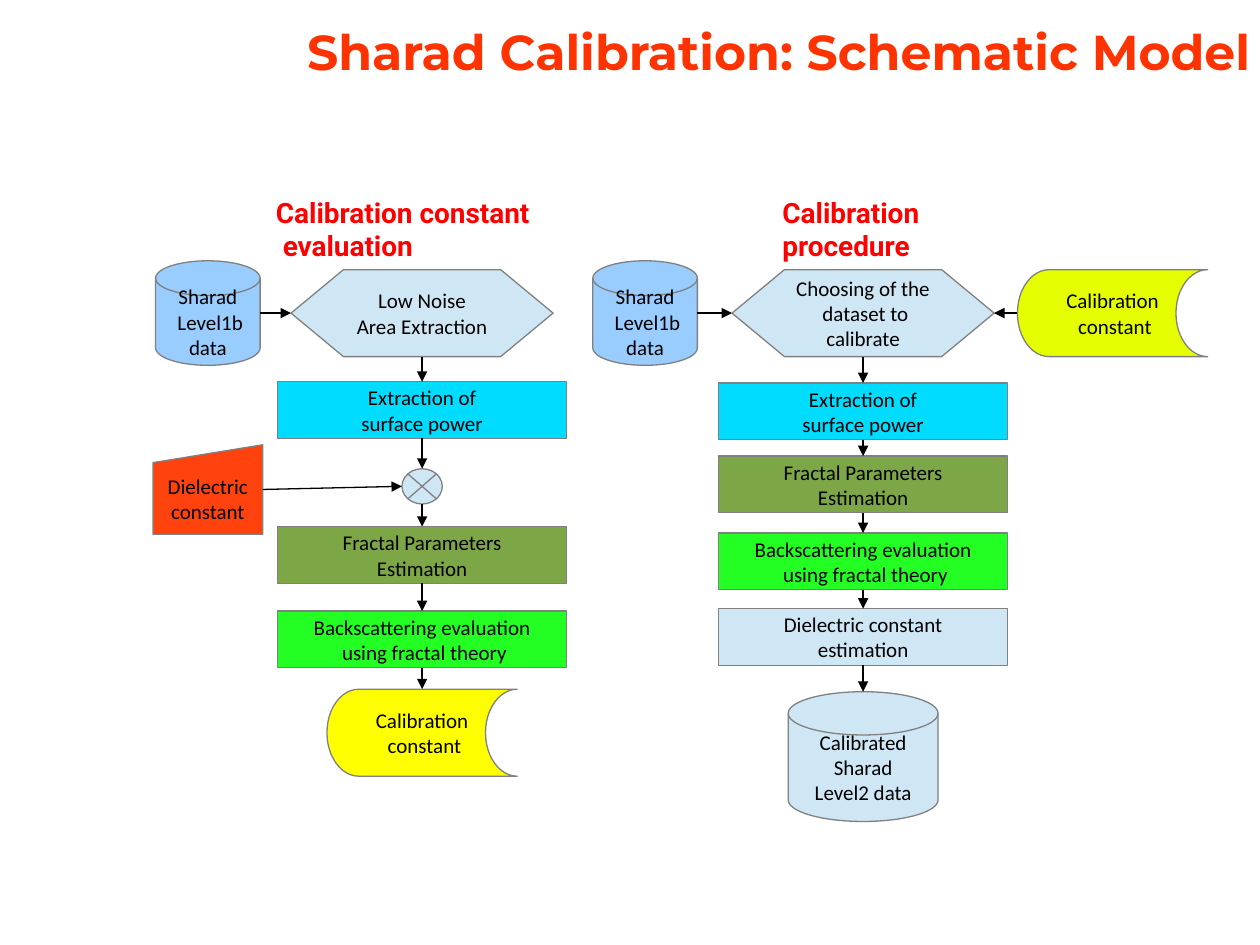
from pptx import Presentation
from pptx.dml.color import RGBColor
from pptx.enum.shapes import MSO_CONNECTOR, MSO_SHAPE
from pptx.enum.text import MSO_ANCHOR, PP_ALIGN
from pptx.oxml.ns import qn
from pptx.util import Inches, Pt
from lxml import etree

STEP = MSO_SHAPE.FLOWCHART_PROCESS
PREP = MSO_SHAPE.FLOWCHART_PREPARATION
STORE = MSO_SHAPE.FLOWCHART_STORED_DATA
DISK = MSO_SHAPE.FLOWCHART_MAGNETIC_DISK
JOIN = MSO_SHAPE.FLOWCHART_SUMMING_JUNCTION
INPUT = MSO_SHAPE.FLOWCHART_MANUAL_INPUT
LINE = MSO_CONNECTOR.STRAIGHT
LEFT, MID, RIGHT = PP_ALIGN.LEFT, PP_ALIGN.CENTER, PP_ALIGN.RIGHT
TOP, HALF = MSO_ANCHOR.TOP, MSO_ANCHOR.MIDDLE

BLACK = RGBColor(0x00, 0x00, 0x00)
GREY = RGBColor(0x80, 0x80, 0x80)
RED = RGBColor(0xFF, 0x00, 0x00)
ORANGE = RGBColor(0xFF, 0x33, 0x00)
RUST = RGBColor(0xFF, 0x42, 0x0E)
PALE = RGBColor(0xCF, 0xE7, 0xF5)
BLUE = RGBColor(0x99, 0xCC, 0xFF)
CYAN = RGBColor(0x00, 0xDC, 0xFF)
OLIVE = RGBColor(0x7D, 0xA6, 0x47)
GREEN = RGBColor(0x23, 0xFF, 0x23)
YELLOW = RGBColor(0xFF, 0xFF, 0x00)
LIME = RGBColor(0xE6, 0xFF, 0x00)

TITLE = {"name": "Montserrat", "size": Pt(28), "bold": True}
HEAD = {"name": "Roboto", "size": Pt(16), "bold": True}
BODY = {"name": "Calibri", "size": Pt(12), "bold": False}

DATA = ["Sharad", " Level1b", "data"]
POWER = ["Extraction of", "surface power"]
FRACTAL = ["Fractal Parameters", "Estimation"]
SCATTER = ["Backscattering evaluation", " using fractal theory"]
CONST = ["Calibration", " constant"]

SIZES = {STEP: (2.29, 0.45), PREP: (2.08, 0.69), STORE: (1.51, 0.69),
         DISK: (0.83, 0.83), JOIN: (0.32, 0.28), INPUT: (0.87, 0.71)}

COLUMNS = [
    (3.35, [
        (PREP, 2.14, PALE, ["Low Noise", "Area Extraction"]),
        (STEP, 3.03, CYAN, POWER),
        (JOIN, 3.72, PALE, []),
        (STEP, 4.18, OLIVE, FRACTAL),
        (STEP, 4.85, GREEN, SCATTER),
        (STORE, 5.47, YELLOW, CONST),
    ]),
    (6.85, [
        (PREP, 2.14, PALE, ["Choosing of the", " dataset to", "calibrate"]),
        (STEP, 3.04, CYAN, POWER),
        (STEP, 3.62, OLIVE, FRACTAL),
        (STEP, 4.23, GREEN, SCATTER),
        (STEP, 4.83, PALE, ["Dielectric constant", "estimation"]),
        (DISK, 5.49, PALE, ["Calibrated", "Sharad", "Level2 data"], (1.19, 1.03)),
    ]),
]

FEEDS = [
    (DISK, 1.65, 2.07, BLUE, DATA, (0, 0)),
    (INPUT, 1.65, 3.53, RUST, ["Dielectric", "constant"], (0, 2)),
    (DISK, 5.12, 2.07, BLUE, DATA, (1, 0)),
    (STORE, 8.83, 2.14, LIME, CONST, (1, 0)),
]

LABELS = [
    (2.1, 1.5, 2.43, 0.63, ["Calibration constant", " evaluation"], HEAD, RED, LEFT, (0.09, 0.05)),
    (6.12, 1.5, 1.5, 0.63, ["Calibration", "procedure"], HEAD, RED, LEFT, (0.09, 0.05)),
    (1.74, 0.17, 8.18, 0.5, ["Sharad Calibration: Schematic Model"], TITLE, ORANGE, RIGHT, (0, 0)),
]

deck = Presentation()
deck.slide_width, deck.slide_height = Inches(10), Inches(7.5)
slide = deck.slides.add_slide(deck.slide_layouts[6])


def write(shape, lines, font, color, align, anchor, wrap, pad):
    frame = shape.text_frame
    side, edge = map(Inches, pad)
    form = {"word_wrap": wrap, "vertical_anchor": anchor, "margin_left": side,
            "margin_right": side, "margin_top": edge, "margin_bottom": edge}
    for key, value in form.items():
        setattr(frame, key, value)
    for row, text in enumerate(lines):
        para = frame.add_paragraph() if row else frame.paragraphs[0]
        para.alignment = align
        run = para.add_run()
        run.text = text
        for key, value in font.items():
            setattr(run.font, key, value)
        run.font.color.rgb = color


def draw(kind, mid, top, fill, lines, size=None):
    wide, high = size or SIZES[kind]
    left = mid - wide / 2
    shape = slide.shapes.add_shape(kind, *map(Inches, (left, top, wide, high)))
    shape.shadow.inherit = False
    shape.fill.solid()
    shape.fill.fore_color.rgb = fill
    shape.line.color.rgb = GREY
    shape.line.width = Pt(0.75)
    if lines:
        write(shape, lines, BODY, BLACK, MID, HALF, False, (0.1, 0.05))
    return {"left": left, "right": left + wide, "top": top, "base": top + high,
            "mid": mid, "half": top + high / 2}


def link(start, end):
    arrow = slide.shapes.add_connector(LINE, *map(Inches, start + end))
    arrow.line.color.rgb = BLACK
    arrow.line.width = Pt(0.75)
    tail = etree.SubElement(arrow.line._get_or_add_ln(), qn("a:tailEnd"))
    tail.set("type", "triangle")
    etree.SubElement(arrow._element.spPr, qn("a:effectLst"))


flows = []
for mid, steps in COLUMNS:
    flow = [draw(kind, mid, *rest) for kind, *rest in steps]
    flows.append(flow)
    for above, below in zip(flow, flow[1:]):
        link((mid, above["base"]), (mid, below["top"]))

for kind, mid, top, fill, lines, (col, row) in FEEDS:
    feed = draw(kind, mid, top, fill, lines)
    goal = flows[col][row]
    out, into = ("right", "left") if mid < goal["mid"] else ("left", "right")
    link((feed[out], feed["half"]), (goal[into], goal["half"]))

for left, top, wide, high, lines, font, color, align, pad in LABELS:
    box = slide.shapes.add_textbox(*map(Inches, (left, top, wide, high)))
    write(box, lines, font, color, align, TOP, True, pad)

deck.save("out.pptx")
